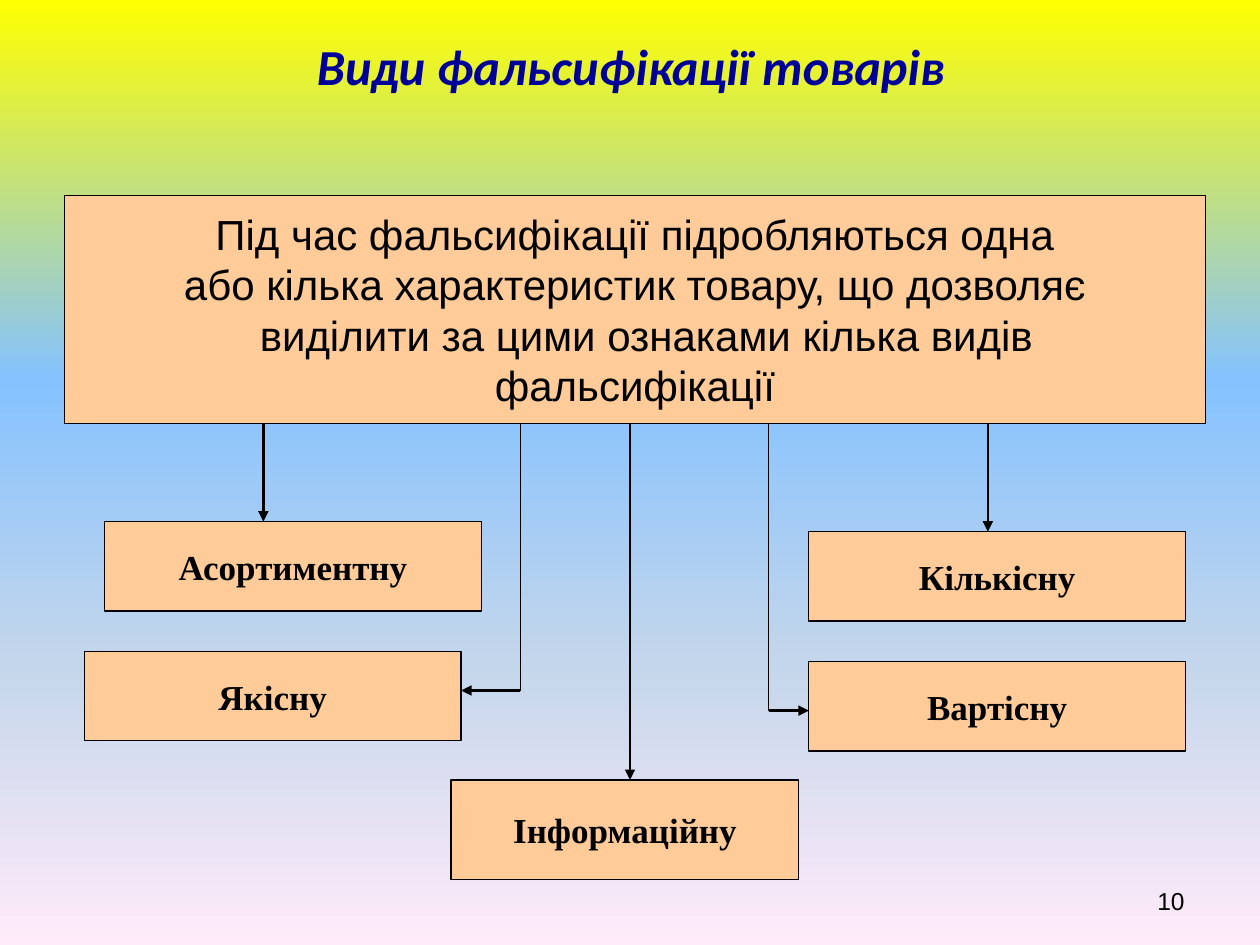
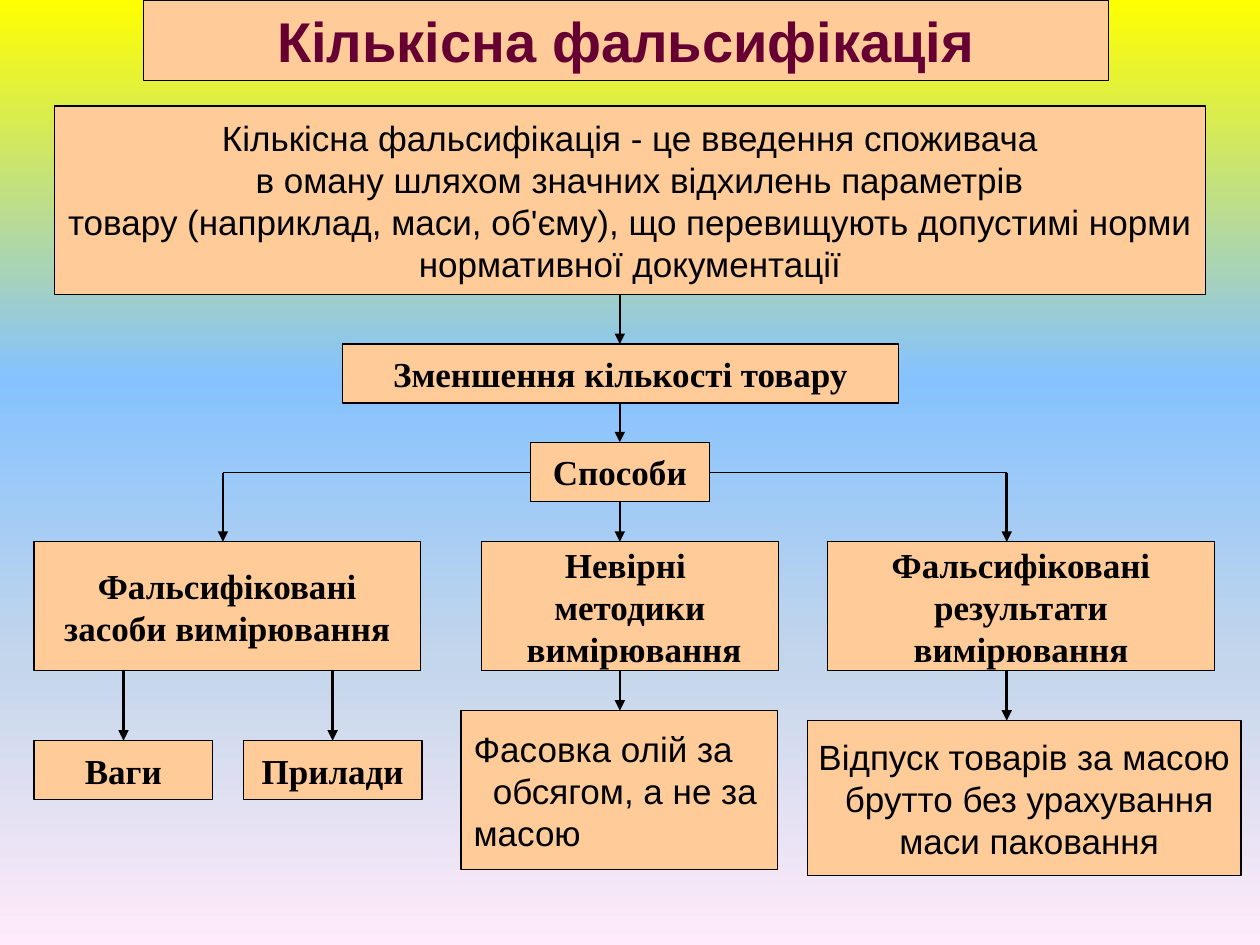
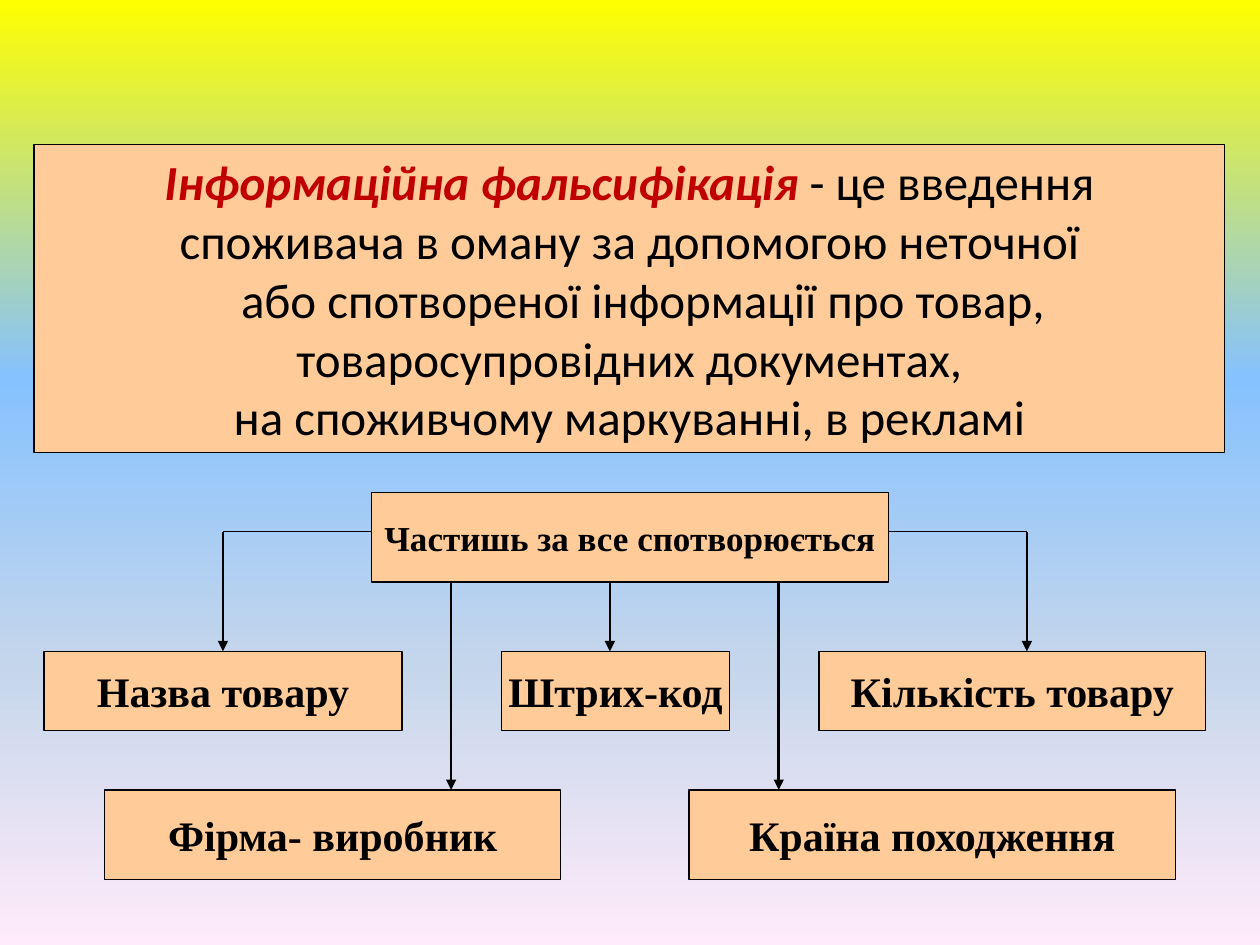
from pptx import Presentation
from pptx.dml.color import RGBColor as RGB
from pptx.enum.shapes import MSO_CONNECTOR as Conn, MSO_SHAPE as Shape
from pptx.enum.text import MSO_ANCHOR as Anchor, PP_ALIGN as Align
from pptx.oxml import parse_xml
from pptx.oxml.ns import nsdecls, qn
from pptx.util import Pt

# Colours
BLACK = RGB(0x00, 0x00, 0x00)
PEACH = RGB(0xFF, 0xCC, 0x99)
NAVY = RGB(0x00, 0x00, 0x99)
WINE = RGB(0x66, 0x00, 0x33)
RED = RGB(0xC0, 0x00, 0x00)
SKY = [(0, RGB(0xFF, 0xFF, 0x00)), (40, RGB(0x85, 0xC2, 0xFF)),
       (70, RGB(0xC4, 0xD6, 0xEB)), (100, RGB(0xFF, 0xEB, 0xFA))]

# Text formats
SERIF = dict(name="Times New Roman", size=20, bold=True, color=BLACK)
LARGE = {**SERIF, "size": 24}
SANS = dict(name="Arial", size=20, bold=False, color=BLACK)
INTRO = {**SANS, "size": 24}
PAGE = {**SANS, "size": 14}
BANNER = dict(name="Arial", size=32, bold=True, color=WINE)
TITLE = dict(name="Calibri", size=28.8, bold=True, italic=True, color=NAVY)
PLAIN = dict(name="Calibri", size=28, bold=False, italic=False, color=BLACK)
TERM = {**PLAIN, "bold": True, "italic": True, "color": RED}

# Each box: (left, top, width, height), format, lines.
# A line that starts with ">" is indented; a list holds (text, format) parts.
# Links: "drop" goes straight down at x; "side" goes down at x, then across at y;
# "wing" goes across at y, then down at x.
KINDS = dict(
    labels=[((36.7, 20.2, 648, 33.8), TITLE, ["Види фальсифікації товарів"], Align.CENTER),
            ((516.2, 500.4, 167.8, 28.8), PAGE, ["10"], Align.RIGHT)],
    boxes=dict(
        main=((36.7, 111.6, 652.3, 130.3), INTRO, [
            "Під час фальсифікації підробляються одна",
            "або кілька характеристик товару, що дозволяє",
            ">виділити за цими ознаками кілька видів",
            "фальсифікації"]),
        range=((59.8, 298.1, 215.3, 51.1), SERIF, ["Асортиментну"]),
        info=((257.8, 445.7, 198.7, 56.9), SERIF, ["Інформаційну"]),
        grade=((48.2, 372.2, 215.3, 51.1), SERIF, ["Якісну"]),
        count=((462.2, 303.8, 215.3, 51.1), SERIF, ["Кількісну"]),
        value=((462.2, 378, 215.3, 51.1), SERIF, ["Вартісну"])),
    links=[("drop", "main", "info", 360), ("drop", "main", "range", 150.5),
           ("drop", "main", "count", 564.5),
           ("side", "main", "grade", 297.4, 394.6),
           ("side", "main", "value", 439.2, 406.1)])

COUNT = dict(
    boxes=dict(
        title=((82.1, 0, 551.5, 46.1), BANNER, ["Кількісна фальсифікація"]),
        main=((31, 60.5, 658.1, 107.7), SANS, [
            "Кількісна фальсифікація - це введення споживача",
            ">в оману шляхом значних відхилень параметрів",
            "товару (наприклад, маси, об'єму), що перевищують допустимі норми",
            "нормативної документації"]),
        less=((195.8, 196.6, 317.5, 33.8), SERIF, ["Зменшення кількості товару"]),
        ways=((303.1, 252.7, 102.2, 33.8), SERIF, ["Способи"]),
        means=((19.4, 309.6, 221, 73.4), SERIF, ["Фальсифіковані", "засоби вимірювання"]),
        method=((275, 309.6, 169.9, 73.4), SERIF, ["Невірні ", "методики", " вимірювання"]),
        result=((473, 309.6, 221, 73.4), SERIF, [
            "Фальсифіковані", "результати", "вимірювання"]),
        scales=((19.4, 423.2, 102.2, 33.8), SERIF, ["Ваги"]),
        tools=((139, 423.2, 102.2, 33.8), SERIF, ["Прилади"]),
        pack=((263.5, 406.1, 180.7, 90.7), SANS, [
            "Фасовка олій за", ">обсягом, а не за", "масою"], Align.LEFT),
        sale=((461.5, 411.8, 247.7, 88.6), SANS, [
            "Відпуск товарів за масою", " брутто без урахування", " маси паковання"])),
    links=[("drop", "main", "less", 354.2), ("drop", "less", "ways", 354.2),
           ("drop", "ways", "method", 354.2), ("drop", "method", "pack", 354.2),
           ("drop", "means", "scales", 70.6), ("drop", "means", "tools", 190.1),
           ("drop", "result", "sale", 575.3),
           ("wing", "ways", "means", 127.4, 270),
           ("wing", "ways", "result", 575.3, 270)])

INFO = dict(
    boxes=dict(
        main=((19.4, 82.8, 680.4, 175.7), PLAIN, [
            [("Інформаційна фальсифікація ", TERM), ("- це введення", PLAIN)],
            "споживача в оману за допомогою неточної",
            ">або спотвореної інформації про товар,",
            "товаросупровідних документах,",
            "на споживчому маркуванні, в рекламі"]),
        head=((212.4, 281.5, 295.2, 51.1), SERIF, ["Частишь за все спотворюється"]),
        name=((25.2, 372.2, 204.5, 45.4), LARGE, ["Назва товару"]),
        code=((286.6, 372.2, 130.3, 45.4), LARGE, ["Штрих-код"]),
        count=((468, 372.2, 221, 45.4), LARGE, ["Кількість товару"]),
        maker=((59.8, 451.4, 260.6, 51.1), LARGE, ["Фірма- виробник"]),
        land=((393.8, 451.4, 277.9, 51.1), LARGE, ["Країна походження"])),
    links=[("drop", "head", "maker", 257.8), ("drop", "head", "code", 348.5),
           ("drop", "head", "land", 445),
           ("wing", "head", "name", 127.4, 303.8),
           ("wing", "head", "count", 586.8, 303.8)])


def style(font, look):
    for key, val in look.items():
        if key == "color":
            font.color.rgb = val
        else:
            setattr(font, key, Pt(val) if key == "size" else val)


def write(shape, look, lines, align, wrap):
    frame = shape.text_frame
    frame.word_wrap = wrap
    frame.vertical_anchor = Anchor.MIDDLE
    for num, line in enumerate(lines):
        para = frame.add_paragraph() if num else frame.paragraphs[0]
        para.alignment = align
        if line[0] == ">":
            gap = Pt(round(look["size"] * 0.55, 1))
            para._p.get_or_add_pPr().set("marL", str(gap))
            line = line[1:]
        for text, form in [(line, look)] if isinstance(line, str) else line:
            run = para.add_run()
            run.text = text
            style(run.font, form)


def label(slide, place, look, lines, align):
    write(slide.shapes.add_textbox(*map(Pt, place)), look, lines, align, True)


def box(slide, place, look, lines, align=Align.CENTER):
    rect = slide.shapes.add_shape(Shape.RECTANGLE, *map(Pt, place))
    rect.shadow.inherit = False
    rect.fill.solid()
    rect.fill.fore_color.rgb = PEACH
    rect.line.color.rgb = BLACK
    rect.line.width = Pt(0.75)
    write(rect, look, lines, align, False)


def line(slide, start, end, arrow=True):
    link = slide.shapes.add_connector(Conn.STRAIGHT, *map(Pt, (*start, *end)))
    link.line.color.rgb = BLACK
    link.line.width = Pt(1.5 if arrow else 0.75)
    if arrow:
        link.line._get_or_add_ln().append(
            parse_xml(f'<a:tailEnd {nsdecls("a")} type="triangle"/>'))
    link._element.spPr.append(parse_xml(f'<a:effectLst {nsdecls("a")}/>'))


def near(place, x):
    """Left or right edge of a box, whichever is closer to x."""
    return min(place[0], place[0] + place[2], key=lambda edge: abs(edge - x))


def join(slide, kind, src, dst, x, y=None):
    base = src[1] + src[3]
    if kind == "drop":
        line(slide, (x, base), (x, dst[1]))
        return
    if kind == "side":
        start, end = (x, base), (near(dst, x), y)
    else:
        start, end = (near(src, x), y), (x, dst[1])
    line(slide, start, (x, y), arrow=False)
    line(slide, (x, y), end)


def paint(master):
    """Give every slide the shared gradient, from top to bottom."""
    fill = master.background.fill
    fill.gradient()
    fill.gradient_angle = 270
    stops = master.element.find(".//" + qn("a:gsLst"))
    for stop in list(stops):
        stops.remove(stop)
    for pos, color in SKY:
        stops.append(parse_xml(
            f'<a:gs {nsdecls("a")} pos="{pos * 1000}"><a:srgbClr val="{color}"/></a:gs>'))


def main():
    prs = Presentation()
    prs.slide_width, prs.slide_height = Pt(720), Pt(540)
    paint(prs.slide_master)
    for page in (KINDS, COUNT, INFO):
        slide = prs.slides.add_slide(prs.slide_layouts[6])
        for item in page.get("labels", []):
            label(slide, *item)
        boxes = page["boxes"]
        for item in boxes.values():
            box(slide, *item)
        for kind, src, dst, *spot in page["links"]:
            join(slide, kind, boxes[src][0], boxes[dst][0], *spot)
    prs.save("out.pptx")


if __name__ == "__main__":
    main()
